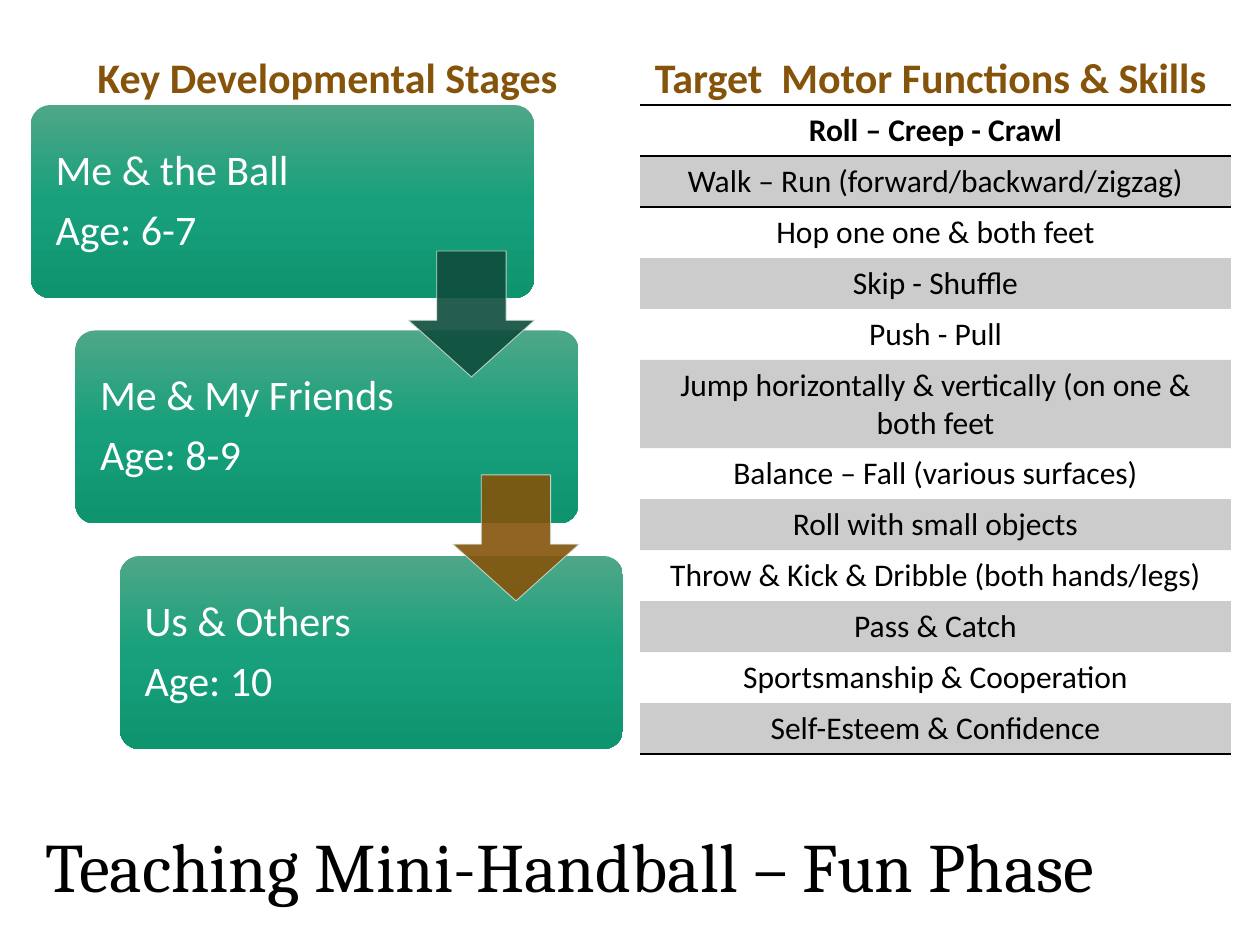
from copy import deepcopy
from dataclasses import dataclass

from lxml.etree import SubElement
from pptx import Presentation
from pptx.dml.color import RGBColor
from pptx.enum.shapes import MSO_SHAPE
from pptx.enum.text import MSO_ANCHOR, PP_ALIGN
from pptx.oxml import parse_xml
from pptx.oxml.ns import nsdecls, qn
from pptx.util import Pt


@dataclass(frozen=True)
class Theme:
    heading_font: str = "Cambria"
    body_font: str = "Calibri"
    black: str = "000000"
    white: str = "FFFFFF"
    brown: str = "85540A"
    dark_green: str = "0E4D3C"
    arrow_line: str = "CDDED6"
    stage_stops: tuple = ("4EA788", "17A07B", "0F9470")
    title_size: float = 39.6
    heading_size: int = 24
    cell_size: int = 18


T = Theme()
PX = 914400 / 126
NO_STYLE = "{2D5ABB26-0587-4C30-8999-92F81FD0307C}"


def px(*lengths):
    """Turn px lengths into EMU."""
    return [round(n * PX) for n in lengths]


def write(p, text, size, color, font=T.body_font, bold=False):
    r = p.add_run()
    r.text = text
    r.font.name = font
    r.font.size = Pt(size)
    r.font.bold = bold
    r.font.color.rgb = RGBColor.from_string(color)


prs = Presentation()
prs.slide_width, prs.slide_height = px(1260, 945)
s = prs.slides.add_slide(prs.slide_layouts[6])

# Title and column headings
texts = [
    ((33, 809, 1187, 122), "Teaching Mini-Handball – Fun Phase", MSO_ANCHOR.MIDDLE,
     PP_ALIGN.LEFT, (T.title_size, T.black, T.heading_font, False)),
    ((32, 21, 591, 88), "Key Developmental Stages", MSO_ANCHOR.BOTTOM,
     PP_ALIGN.CENTER, (T.heading_size, T.brown, T.body_font, True)),
    ((640, 21, 591, 88), "Target  Motor Functions & Skills ", MSO_ANCHOR.BOTTOM,
     PP_ALIGN.CENTER, (T.heading_size, T.brown, T.body_font, True)),
]
for box, text, anchor, align, look in texts:
    tf = s.shapes.add_textbox(*px(*box)).text_frame
    tf.word_wrap = True
    tf.vertical_anchor = anchor
    p = tf.paragraphs[0]
    p.alignment = align
    p.line_spacing = 0.9
    write(p, text, *look)

# Stages, each one step right and down from the last
stages = [("Me & the Ball", "Age: 6-7"), ("Me & My Friends", "Age: 8-9"),
          ("Us & Others", "Age: 10")]
for i, lines in enumerate(stages):
    sp = s.shapes.add_shape(MSO_SHAPE.ROUNDED_RECTANGLE,
                            *px(31 + 44.5 * i, 105 + 225.5 * i, 503, 193))
    sp.adjustments[0] = 0.1
    sp.shadow.inherit = False
    sp.line.fill.background()
    sp.fill.gradient()
    sp.fill.gradient_angle = 270
    stops = sp._element.spPr.find(".//" + qn("a:gsLst"))
    stops.insert(1, deepcopy(stops[0]))
    for n, (stop, color) in enumerate(zip(sp.fill.gradient_stops, T.stage_stops)):
        stop.position = n / 2
        stop.color.rgb = RGBColor.from_string(color)
    tf = sp.text_frame
    tf.word_wrap = True
    tf.vertical_anchor = MSO_ANCHOR.MIDDLE
    tf.margin_left, tf.margin_right = px(19, 19)
    for n, line in enumerate(lines):
        p = tf.paragraphs[0] if n == 0 else tf.add_paragraph()
        p.alignment = PP_ALIGN.LEFT
        p.line_spacing = 0.9
        p.space_after = Pt(8.4)
        write(p, line, T.heading_size, T.white)

# Arrows from each stage to the next
for i, color in enumerate((T.dark_green, T.brown)):
    sp = s.shapes.add_shape(MSO_SHAPE.DOWN_ARROW,
                            *px(408.5 + 44.5 * i, 251 + 224 * i, 126, 126))
    sp.adjustments[0], sp.adjustments[1] = 0.55, 0.45
    sp.shadow.inherit = False
    sp.fill.solid()
    sp.fill.fore_color.rgb = RGBColor.from_string(color)
    sp.line.color.rgb = RGBColor.from_string(T.arrow_line)
    sp.line.width = Pt(0.5)
    for clr in sp._element.spPr.iter(qn("a:srgbClr")):
        SubElement(clr, qn("a:alpha"), val="90000")

# Skills table: grey on every second row, rules around the head and at the foot
skills = [
    "Roll – Creep - Crawl",
    "Walk – Run (forward/backward/zigzag)",
    "Hop one one & both feet",
    "Skip - Shuffle",
    "Push - Pull",
    "Jump horizontally & vertically (on one & both feet",
    "Balance – Fall (various surfaces)",
    "Roll with small objects",
    "Throw & Kick & Dribble (both hands/legs)",
    "Pass & Catch",
    "Sportsmanship & Cooperation",
    "Self-Esteem & Confidence",
]
last = len(skills) - 1
borders = {0: ("lnT", "lnB"), 1: ("lnT",), last: ("lnB",)}
table = s.shapes.add_table(len(skills), 1, *px(640, 105, 591, 51 * len(skills))).table
table._tbl.tblPr.find(qn("a:tableStyleId")).text = NO_STYLE
for i, skill in enumerate(skills):
    table.rows[i].height = px(51)[0]
    cell = table.cell(i, 0)
    p = cell.text_frame.paragraphs[0]
    p.alignment = PP_ALIGN.CENTER
    write(p, skill, T.cell_size, T.black, bold=i == 0)
    tcPr = cell._tc.get_or_add_tcPr()
    if i % 2:
        cell.fill.solid()
        cell.fill.fore_color.rgb = RGBColor.from_string(T.black)
        SubElement(tcPr.find(".//" + qn("a:srgbClr")), qn("a:alpha"), val="20000")
    else:
        cell.fill.background()
    for n, side in enumerate(borders.get(i, ())):
        tcPr.insert(n, parse_xml(
            f'<a:{side} {nsdecls("a")} w="12700"><a:solidFill>'
            f'<a:srgbClr val="{T.black}"/></a:solidFill></a:{side}>'))

prs.save("out.pptx")
